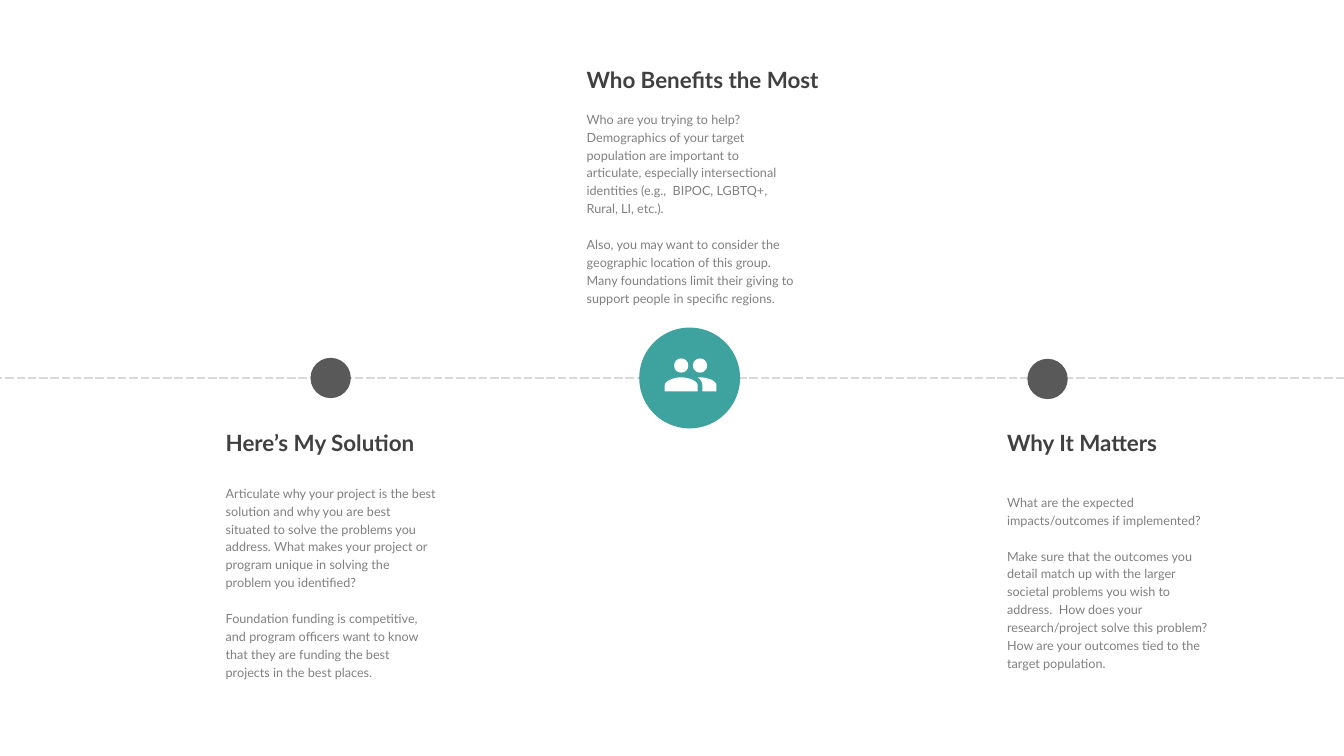
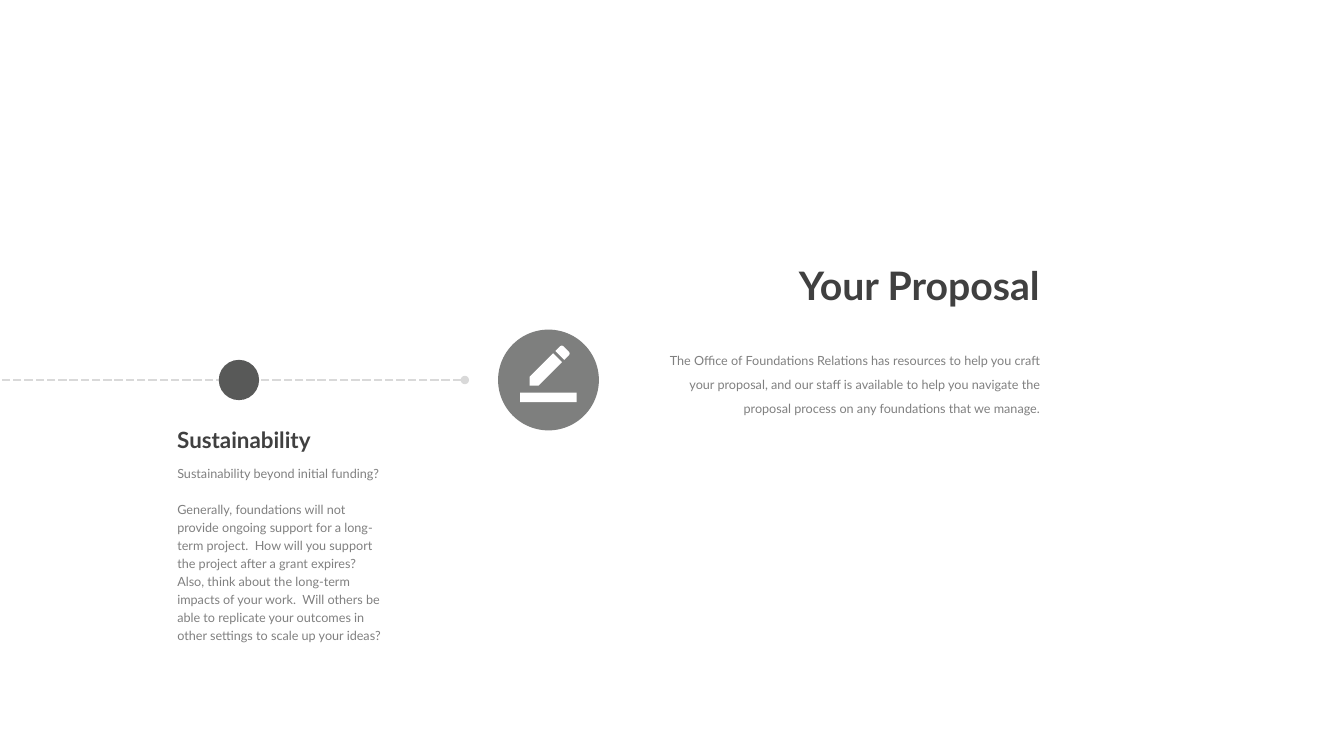
import math

import lxml.etree
import pptx
import pptx.dml.color
import pptx.enum.dml
import pptx.enum.shapes
import pptx.enum.text
import pptx.oxml.ns
import pptx.util

PX = 9144  # EMU, 100 px to the inch
PAGE_WIDTH, PAGE_HEIGHT = 1333, 750
FONT = "Lato"
WHITE, RULE, DOT = "FFFFFF", "D9D9D9", "585958"
TEAL, GREY = "3EA39E", "7E7F7E"
HEADING, BODY = "404040", "808080"
DISC_SIZE, DOT_SIZE = 100, 40
ICON_SIZE, ICON_GRID, ICON_UNIT = 56, 24, 100
LEFT = pptx.enum.text.PP_ALIGN.LEFT
RIGHT = pptx.enum.text.PP_ALIGN.RIGHT


def px(*lengths):
    return [pptx.util.Emu(length * PX) for length in lengths]


def color(hex_string):
    return pptx.dml.color.RGBColor.from_string(hex_string)


def paint(shape, fill):
    shape.shadow.inherit = False
    shape.fill.solid()
    shape.fill.fore_color.rgb = color(fill)
    shape.line.fill.background()


def add_text(page, box, paragraphs, size, ink, bold=False, align=LEFT, leading=None):
    """Place paragraphs with one blank line's gap between them."""
    frame = page.shapes.add_textbox(*px(*box)).text_frame
    frame.word_wrap = True
    for index, text in enumerate(paragraphs):
        para = frame.paragraphs[0] if index == 0 else frame.add_paragraph()
        para.text = text
        para.alignment = align
        if leading:
            para.line_spacing = pptx.util.Pt(leading)
            if index:
                para.space_before = pptx.util.Pt(leading)
        para.font.name = FONT
        para.font.size = pptx.util.Pt(size)
        para.font.bold = bold
        para.font.color.rgb = color(ink)


def add_circle(page, left, top, size, fill):
    oval = pptx.enum.shapes.MSO_SHAPE.OVAL
    paint(page.shapes.add_shape(oval, *px(left, top, size, size)), fill)


def add_timeline(page, right, y, oval_end=False):
    """Draw the dashed line from right to the left page edge."""
    straight = pptx.enum.shapes.MSO_CONNECTOR.STRAIGHT
    timeline = page.shapes.add_connector(straight, *px(right, y, 0, y))
    timeline.line.color.rgb = color(RULE)
    timeline.line.width = pptx.util.Pt(2)
    timeline.line.dash_style = pptx.enum.dml.MSO_LINE.SQUARE_DOT
    qn = pptx.oxml.ns.qn
    if oval_end:
        outline = timeline.line._get_or_add_ln()
        lxml.etree.SubElement(outline, qn("a:headEnd"), type="oval")
    lxml.etree.SubElement(timeline._element.spPr, qn("a:effectLst"))


def add_step(page, left, top, title, paragraphs, title_width, body_offset, body_height):
    add_text(page, (left, top, title_width, 37), [title], 16, HEADING, bold=True)
    add_text(page, (left, top + body_offset, 228, body_height), paragraphs,
             9, BODY, leading=12.8)


def curve(start, first, second, end, pieces=10):
    """Points along a cubic curve, after its start."""
    points = []
    for step in range(1, pieces + 1):
        t = step / pieces
        weights = ((1 - t) ** 3, 3 * t * (1 - t) ** 2, 3 * t * t * (1 - t), t ** 3)
        points.append(tuple(
            sum(weight * value for weight, value in zip(weights, axis))
            for axis in zip(start, first, second, end)))
    return points


def head(x, y, radius=3, pieces=36):
    angles = [2 * math.pi * step / pieces for step in range(pieces)]
    return [(x + radius * math.cos(a), y + radius * math.sin(a)) for a in angles]


def people_outlines():
    front = [
        (8, 13),
        *curve((8, 13), (5.67, 13), (1, 14.17), (1, 16.5)),
        (1, 19), (15, 19), (15, 16.5),
        *curve((15, 16.5), (15, 14.17), (10.33, 13), (8, 13)),
    ]
    back = [
        (16, 13), (15.03, 13.05),
        *curve((15.03, 13.05), (16.19, 13.89), (17, 15.02), (17, 16.5)),
        (17, 19), (23, 19), (23, 16.5),
        *curve((23, 16.5), (23, 14.17), (18.33, 13), (16, 13)),
    ]
    return [head(8, 8), head(16, 8), front, back]


def pencil_outlines():
    underline = [(0, 20), (24, 20), (24, 24), (0, 24)]
    shaft = [(17.75, 7), (14, 3.25), (4, 13.25), (4, 17), (7.75, 17)]
    eraser = [
        (18.75, 6), (20.71, 4.04),
        *curve((20.71, 4.04), (21.1, 3.65), (21.1, 3.02), (20.71, 2.63)),
        (18.37, 0.29),
        *curve((18.37, 0.29), (17.98, -0.1), (17.35, -0.1), (16.96, 0.29)),
        (15, 2.25),
    ]
    return [underline, shaft, eraser]


def add_icon(page, left, top, outlines):
    """Draw outlines, given on a 24-unit grid, as one white shape."""
    scale = ICON_SIZE * PX / (ICON_GRID * ICON_UNIT)
    contours = [[(x * ICON_UNIT, y * ICON_UNIT) for x, y in outline]
                for outline in outlines]
    builder = page.shapes.build_freeform(*contours[0][0], scale=scale)
    for index, contour in enumerate(contours):
        if index:
            builder.move_to(*contour[0])
        builder.add_line_segments(contour[1:], close=True)
    paint(builder.convert_to_shape(*px(left, top)), WHITE)


def add_badge(page, left, top, fill, outlines, icon_offset):
    add_circle(page, left, top, DISC_SIZE, fill)
    add_icon(page, left + icon_offset[0], top + icon_offset[1], outlines)


def add_proposal(page, left, top):
    add_text(page, (left, top, 447, 57), ["Your Proposal"], 28, HEADING,
             bold=True, align=RIGHT)
    add_text(page, (left + 52, top + 82, 395, 150), [
        "The Office of Foundations Relations has resources to help you craft your "
        "proposal, and our staff is available to help you navigate the proposal "
        "process on any foundations that we manage.",
    ], 9, BODY, align=RIGHT, leading=17.3)


def build_benefits_page(page):
    add_timeline(page, PAGE_WIDTH, 375)
    add_badge(page, 634, 325, TEAL, people_outlines(), (23, 19))
    add_circle(page, 308, 355, DOT_SIZE, DOT)
    add_circle(page, 1019, 356, DOT_SIZE, DOT)
    add_step(page, 214, 421, "Here’s My Solution", [
        "Articulate why your project is the best solution and why you are best "
        "situated to solve the problems you address. What makes your project or "
        "program unique in solving the problem you identified?",
        "Foundation funding is competitive, and program officers want to know that "
        "they are funding the best projects in the best places.",
    ], title_width=228, body_offset=53, body_height=227)
    add_step(page, 989, 421, "Why It Matters", [
        "What are the expected impacts/outcomes if implemented?",
        "Make sure that the outcomes you detail match up with the larger societal "
        "problems you wish to address.  How does your research/project solve this "
        "problem?  How are your outcomes tied to the target population.",
    ], title_width=197, body_offset=62, body_height=191)
    add_step(page, 572, 61, "Who Benefits the Most", [
        "Who are you trying to help? Demographics of your target population are "
        "important to articulate, especially intersectional identities "
        "(e.g.,  BIPOC, LGBTQ+, Rural, LI, etc.).",
        "Also, you may want to consider the geographic location of this group.  "
        "Many foundations limit their giving to support people in specific regions.",
    ], title_width=274, body_offset=42, body_height=191)


def build_proposal_page(page):
    add_proposal(page, 594, 254)
    add_timeline(page, 461, 377, oval_end=True)
    add_badge(page, 494, 327, GREY, pencil_outlines(), (22, 16))
    add_circle(page, 217, 357, DOT_SIZE, DOT)
    add_step(page, 166, 418, "Sustainability", [
        "Sustainability beyond initial funding?",
        "Generally, foundations will not provide ongoing support for a long-term "
        "project.  How will you support the project after a grant expires?  Also, "
        "think about the long-term impacts of your work.  Will others be able to "
        "replicate your outcomes in other settings to scale up your ideas?",
    ], title_width=197, body_offset=37, body_height=191)


def main():
    deck = pptx.Presentation()
    deck.slide_width, deck.slide_height = px(PAGE_WIDTH, PAGE_HEIGHT)
    blank = deck.slide_layouts[6]
    for build in (build_benefits_page, build_proposal_page):
        build(deck.slides.add_slide(blank))
    deck.save("out.pptx")


if __name__ == "__main__":
    main()
